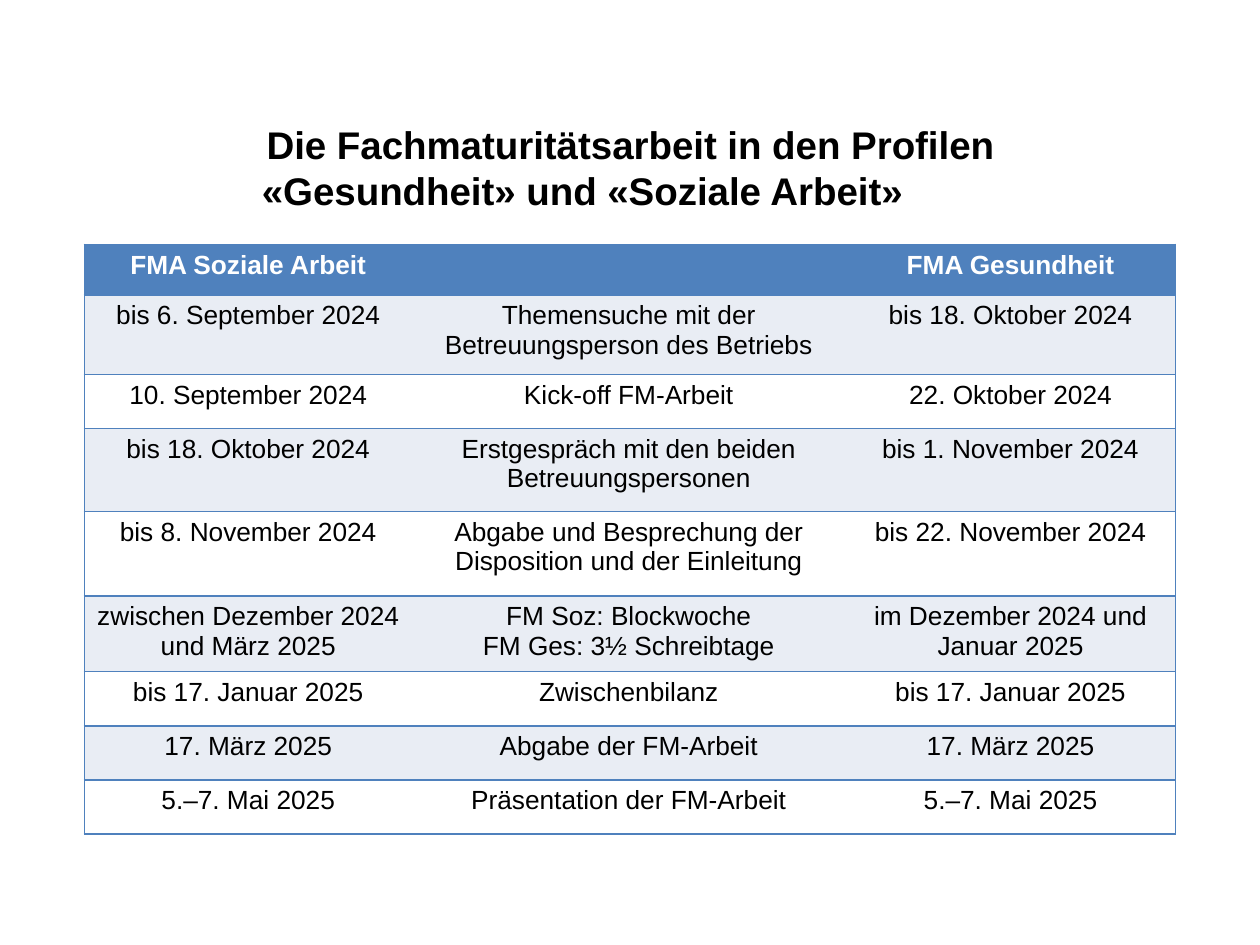
"""Build a slide with the schedule of the Fachmaturitätsarbeit."""
from lxml import etree
from pptx import Presentation
from pptx.dml.color import RGBColor
from pptx.enum.text import PP_ALIGN
from pptx.oxml.ns import qn
from pptx.util import Inches, Pt

LEFT, CENTER = PP_ALIGN.LEFT, PP_ALIGN.CENTER
BLUE, PALE, WHITE, BLACK = "4F81BD", "E9EDF4", "FFFFFF", "000000"

TITLE = [("Die Fachmaturitätsarbeit in den Profilen", CENTER),
         ("«Gesundheit» und «Soziale Arbeit»", LEFT)]
SCHEDULE = [
    ("FMA Soziale Arbeit", "", "FMA Gesundheit"),
    ("bis 6. September 2024", "Themensuche mit der Betreuungsperson des Betriebs",
     "bis 18. Oktober 2024"),
    ("10. September 2024", "Kick-off FM-Arbeit", "22. Oktober 2024"),
    ("bis 18. Oktober 2024", "Erstgespräch mit den beiden Betreuungspersonen",
     "bis 1. November 2024"),
    ("bis 8. November 2024", "Abgabe und Besprechung der Disposition und der Einleitung",
     "bis 22. November 2024"),
    ("zwischen Dezember 2024 und März 2025", "FM Soz: Blockwoche\nFM Ges: 3½ Schreibtage",
     "im Dezember 2024 und Januar 2025"),
    ("bis 17. Januar 2025", "Zwischenbilanz", "bis 17. Januar 2025"),
    ("17. März 2025", "Abgabe der FM-Arbeit", "17. März 2025"),
    ("5.–7. Mai 2025", "Präsentation der FM-Arbeit", "5.–7. Mai 2025"),
]
COL_WIDTHS = [2.6, 3.44, 2.62]
ROW_HEIGHTS = [0.35, 0.63, 0.43, 0.66, 0.67, 0.6, 0.43, 0.43, 0.43]


def rgb(value):
    return RGBColor.from_string(value)


def write(p, text, size=15, color=BLACK, bold=False, align=CENTER):
    p.alignment = align
    r = p.add_run()
    r.text = text
    r.font.name, r.font.size, r.font.bold = "Arial", Pt(size), bold
    r.font.color.rgb = rgb(color)


def set_borders(cell, visible):
    tc_pr = cell._tc.get_or_add_tcPr()
    for index, side in enumerate("LRTB"):
        line = etree.Element(qn(f"a:ln{side}"), w=str(Pt(1)))
        if side in visible:
            fill = etree.SubElement(line, qn("a:solidFill"))
            etree.SubElement(fill, qn("a:srgbClr"), val=BLUE)
        else:
            etree.SubElement(line, qn("a:noFill"))
        tc_pr.insert(index, line)


def add_title(slide):
    tf = slide.shapes.add_textbox(Inches(1.98), Inches(0.91), Inches(6.05), Inches(0.84)).text_frame
    tf.word_wrap = True
    for i, (text, align) in enumerate(TITLE):
        p = tf.add_paragraph() if i else tf.paragraphs[0]
        write(p, text, size=22, bold=True, align=align)


def add_schedule(slide):
    table = slide.shapes.add_table(
        len(SCHEDULE), len(COL_WIDTHS), Inches(0.67), Inches(1.94),
        Inches(sum(COL_WIDTHS)), Inches(sum(ROW_HEIGHTS))).table
    table.first_row = table.horz_banding = False
    for column, width in zip(table.columns, COL_WIDTHS):
        column.width = Inches(width)
    for row, height in zip(table.rows, ROW_HEIGHTS):
        row.height = Inches(height)
    for r, entries in enumerate(SCHEDULE):
        header = r == 0
        fill = BLUE if header else (WHITE, PALE)[r % 2]
        for c, entry in enumerate(entries):
            cell = table.cell(r, c)
            cell.fill.solid()
            cell.fill.fore_color.rgb = rgb(fill)
            set_borders(cell, ("LTB", "TB", "RTB")[c])
            tf = cell.text_frame
            for i, text in enumerate(entry.split("\n")):
                p = tf.add_paragraph() if i else tf.paragraphs[0]
                write(p, text, color=WHITE if header else BLACK, bold=header)


def main():
    prs = Presentation()
    prs.slide_width, prs.slide_height = Inches(10), Inches(7.5)
    slide = prs.slides.add_slide(prs.slide_layouts[6])
    add_title(slide)
    add_schedule(slide)
    prs.save("out.pptx")


if __name__ == "__main__":
    main()
